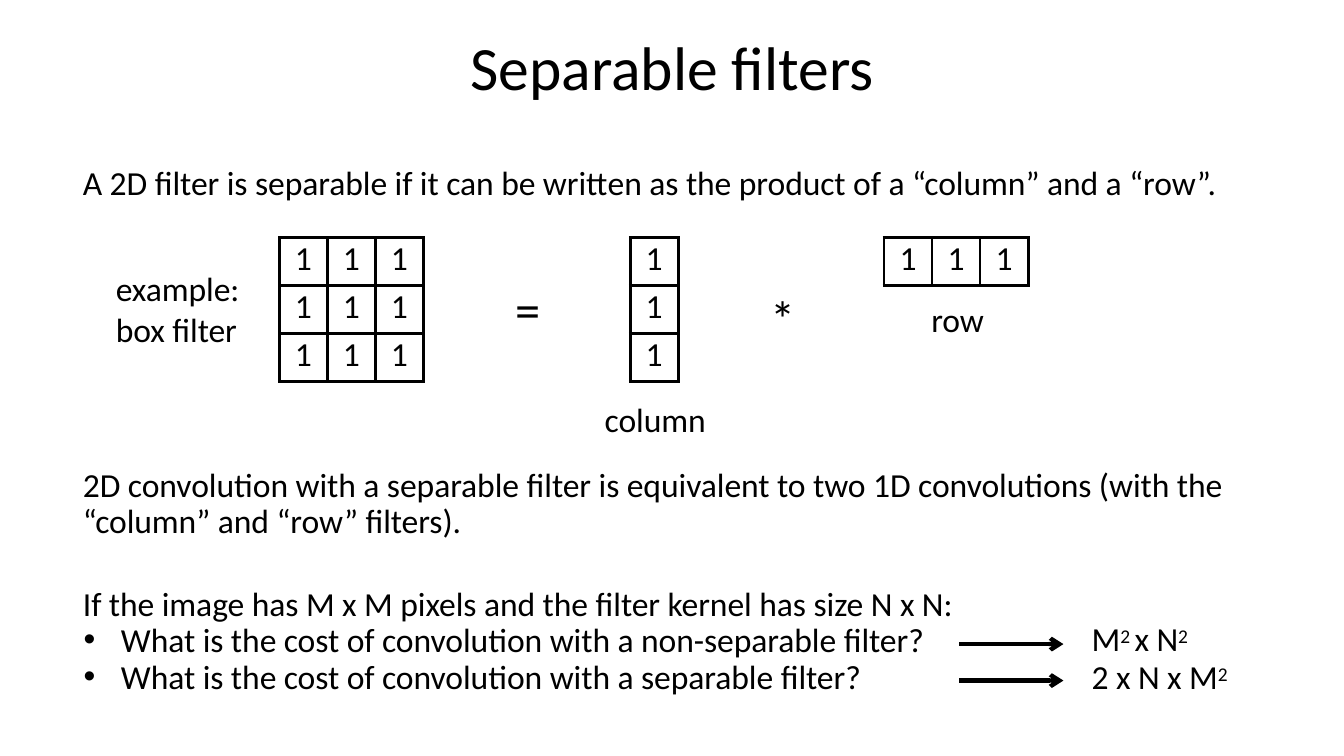
from lxml import etree
from pptx import Presentation
from pptx.dml.color import RGBColor
from pptx.enum.shapes import MSO_CONNECTOR
from pptx.enum.text import PP_ALIGN
from pptx.oxml.ns import qn
from pptx.util import Cm, Pt

BLACK = RGBColor(0x00, 0x00, 0x00)
LEFT, CENTER = PP_ALIGN.LEFT, PP_ALIGN.CENTER
STRAIGHT = MSO_CONNECTOR.STRAIGHT
BORDER_TAGS = ("a:lnL", "a:lnR", "a:lnT", "a:lnB")


class FilterSlide:
    font_name = "Calibri"
    body_size = 24
    cell_size = 1.21

    def __init__(self, presentation):
        self.slide = presentation.slides.add_slide(presentation.slide_layouts[6])

    def fill_paragraph(self, paragraph, text, size=body_size, align=LEFT, line=None,
                       before=0, indent=0.03, bullet=False):
        """Fill a paragraph; parts between ^ marks are superscript."""
        paragraph.alignment = align
        paragraph.space_before = Pt(before)
        if line:
            paragraph.line_spacing = Pt(line)
        properties = paragraph._p.get_or_add_pPr()
        if bullet:
            properties.set("marL", str(Cm(0.99)))
            properties.set("indent", str(Cm(-0.94)))
            etree.SubElement(properties, qn("a:buFont"), typeface="Arial")
            etree.SubElement(properties, qn("a:buChar"), char="•")
        elif align == LEFT:
            properties.set("marL", str(Cm(indent)))
        for index, part in enumerate(text.split("^")):
            if not part:
                continue
            run = paragraph.add_run()
            run.text = part
            run.font.name = self.font_name
            run.font.size = Pt(size)
            run.font.color.rgb = BLACK
            run_properties = run._r.get_or_add_rPr()
            run_properties.set("spc", "-5")
            if index % 2:
                run_properties.set("baseline", "24000")

    def text(self, left, top, width, height, *paragraphs, inset_top=0.03):
        """Add a text box; each paragraph is a (text, options) pair."""
        box = self.slide.shapes.add_textbox(Cm(left), Cm(top), Cm(width), Cm(height))
        frame = box.text_frame
        frame.word_wrap = True
        frame.margin_left = frame.margin_right = frame.margin_bottom = 0
        frame.margin_top = Cm(inset_top)
        for index, (text, options) in enumerate(paragraphs):
            paragraph = frame.add_paragraph() if index else frame.paragraphs[0]
            self.fill_paragraph(paragraph, text, **options)

    def kernel(self, left, top, rows, columns):
        """Add a grid of ones with black borders."""
        size = Cm(self.cell_size)
        table = self.slide.shapes.add_table(
            rows, columns, Cm(left), Cm(top), size * columns, size * rows).table
        table.first_row = table.horz_banding = False
        for row in table.rows:
            row.height = size
        for column in table.columns:
            column.width = size
        for cell in table.iter_cells():
            cell.margin_left = cell.margin_right = cell.margin_bottom = 0
            cell.margin_top = Cm(0.03)
            self.fill_paragraph(cell.text_frame.paragraphs[0], "1", align=CENTER)
            properties = cell._tc.get_or_add_tcPr()
            for tag in BORDER_TAGS:
                border = etree.SubElement(properties, qn(tag), w=str(Pt(2.25)))
                fill = etree.SubElement(border, qn("a:solidFill"))
                etree.SubElement(fill, qn("a:srgbClr"), val=str(BLACK))
            cell.fill.background()

    def arrow(self, left, right, y):
        connector = self.slide.shapes.add_connector(
            STRAIGHT, Cm(left), Cm(y), Cm(right), Cm(y))
        connector.line.color.rgb = BLACK
        connector.line.width = Pt(3)
        etree.SubElement(connector.line._get_or_add_ln(), qn("a:tailEnd"), type="arrow")
        etree.SubElement(connector._element.spPr, qn("a:effectLst"))


def main():
    presentation = Presentation()
    presentation.slide_width, presentation.slide_height = Cm(33.87), Cm(19.05)
    page = FilterSlide(presentation)

    # Title and definition
    page.text(1.42, 0.69, 31.04, 1.93,
              ("Separable filters", {"size": 44, "align": CENTER}))
    page.text(2.06, 4.06, 29.2, 1.09,
              ("A 2D filter is separable if it can be written as the product of "
               "a “column” and a “row”.", {}))

    # Box filter = column * row
    page.text(2.87, 6.73, 3.2, 2.11, ("example: box filter", {"indent": 0.05}))
    for left, rows, columns in ((7.04, 3, 3), (15.88, 3, 1), (22.28, 1, 3)):
        page.kernel(left, 5.99, rows, columns)
    page.text(12.95, 6.99, 0.71, 1.6, ("=", {"size": 36}))
    page.text(19.38, 7.21, 0.71, 1.6, ("*", {"size": 36}))
    page.text(23.44, 7.49, 1.6, 1.09, ("row", {}))

    # Column label and equivalence
    page.text(2.06, 9.42, 28.91, 4.19,
              ("column", {"align": CENTER, "before": 17.8}),
              ("2D convolution with a separable filter is equivalent to two 1D "
               "convolutions (with the “column” and “row” filters).",
               {"line": 25.9, "before": 20.1}),
              inset_top=0.64)

    # Cost questions and answers
    page.text(2.06, 14.71, 22.1, 2.87,
              ("If the image has M x M pixels and the filter kernel has size N x N:",
               {"line": 27.4}),
              ("What is the cost of convolution with a non-separable filter?",
               {"line": 25.4, "bullet": True}),
              ("What is the cost of convolution with a separable filter?",
               {"line": 26.9, "bullet": True}))
    page.text(27.41, 15.62, 4, 1.98,
              ("M^2 ^x N^2^", {"line": 26.9, "indent": 0.1}),
              ("2 x N x M^2^", {"line": 26.9, "indent": 0.1}))
    for y in (16.23, 17.15):
        page.arrow(24.18, 26.8, y)

    presentation.save("out.pptx")


if __name__ == "__main__":
    main()
